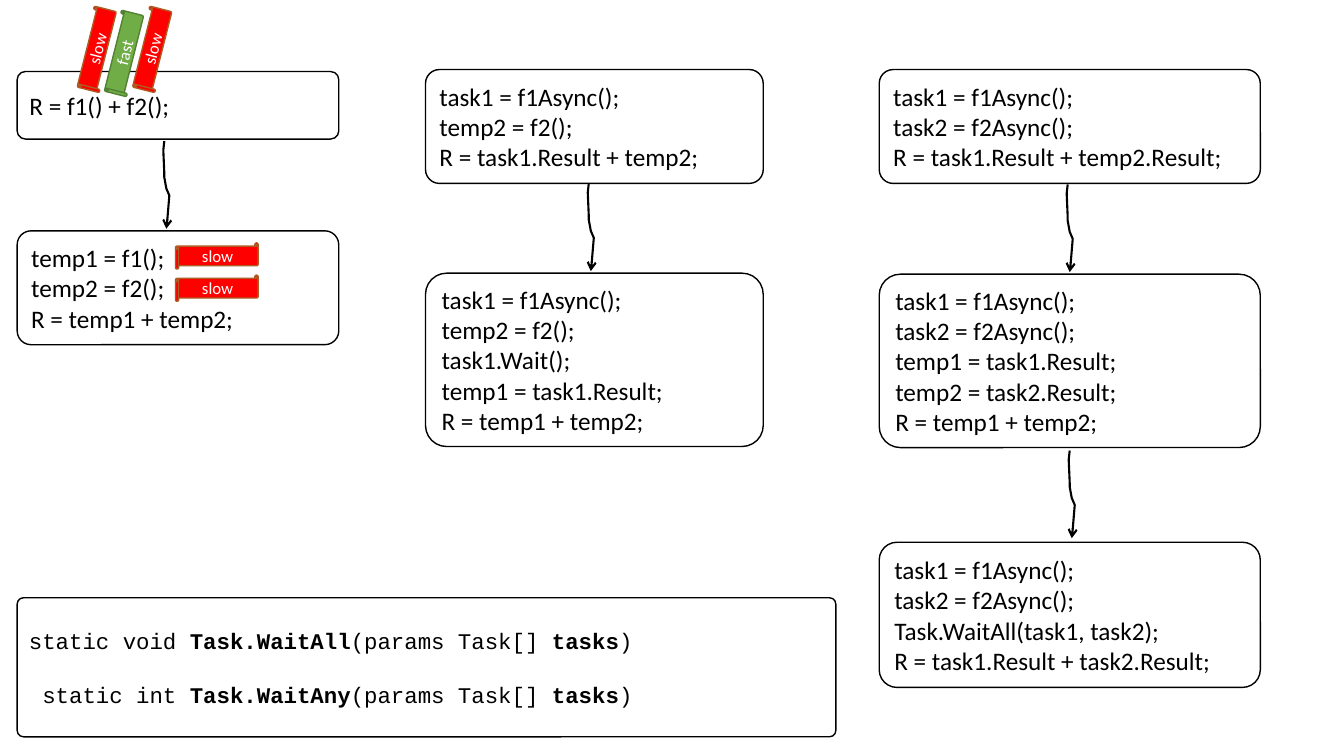
import dataclasses
import typing

import lxml.etree
import pptx
import pptx.dml.color
import pptx.enum.shapes
import pptx.enum.text
import pptx.oxml.ns
import pptx.util

Inches = pptx.util.Inches
Pt = pptx.util.Pt
SHAPES = pptx.enum.shapes.MSO_SHAPE
ALIGN = pptx.enum.text.PP_ALIGN
MIDDLE = pptx.enum.text.MSO_ANCHOR.MIDDLE

COLORS = {
    "ink": "000000",
    "paper": "FFFFFF",
    "slow": "FF0000",
    "slow edge": "AF5C24",
    "fast": "70AD47",
    "fast edge": "538035",
}
CODE = {"name": "Calibri", "size": Pt(18)}
MONO = {"name": "Courier New", "size": Pt(16)}
LABEL = {"name": "Calibri", "size": Pt(12)}

Run = tuple[str, bool]
Line = list[Run]


@dataclasses.dataclass
class Box:
    left: float
    top: float
    width: float
    height: float
    lines: list[Line]
    font: dict[str, typing.Any]
    round: float = 0.122
    gap: float = 0


@dataclasses.dataclass
class Scroll:
    left: float
    top: float
    label: str
    turn: float = 0


def plain(text: str) -> list[Line]:
    return [[(line, False)] for line in text.split("\n")]


def wait_line(start: str, name: str) -> Line:
    return [(start, False), (name, True), ("(params Task[] ", False),
            ("tasks", True), (")", False)]


# Code boxes, column by column
BOXES = [
    Box(0.17, 0.71, 3.19, 0.67, plain("R = f1() + f2();"), CODE),
    Box(0.17, 2.29, 3.19, 1.13,
        plain("temp1 = f1();\ntemp2 = f2();\nR = temp1 + temp2;"), CODE),
    Box(4.22, 0.69, 3.35, 1.13,
        plain("task1 = f1Async();\ntemp2 = f2();\nR = task1.Result + temp2;"), CODE),
    Box(4.22, 2.71, 3.35, 1.72,
        plain("task1 = f1Async();\ntemp2 = f2();\ntask1.Wait();\n"
              "temp1 = task1.Result;\nR = temp1 + temp2;"), CODE),
    Box(8.72, 0.69, 3.78, 1.13,
        plain("task1 = f1Async();\ntask2 = f2Async();\n"
              "R = task1.Result + temp2.Result;"), CODE),
    Box(8.72, 2.72, 3.78, 1.72,
        plain("task1 = f1Async();\ntask2 = f2Async();\ntemp1 = task1.Result;\n"
              "temp2 = task2.Result;\nR = temp1 + temp2;"), CODE),
    Box(8.72, 5.38, 3.78, 1.44,
        plain("task1 = f1Async();\ntask2 = f2Async();\n"
              "Task.WaitAll(task1, task2);\nR = task1.Result + task2.Result;"), CODE),
    Box(0.17, 5.93, 8.12, 1.38,
        [wait_line("static void ", "Task.WaitAll"),
         wait_line(" static int ", "Task.WaitAny")], MONO, 0.046, 19.5),
]

# Bent arrows: left and top of each, and the shared outline
ARROWS = [(1.62, 1.4), (5.83, 1.82), (10.58, 1.83), (10.6, 4.47)]
BEND = [(0.01, 0), (0, 0.09), (0.01, 0.32), (0.01, 0.36), (0.03, 0.47),
        (0.06, 0.54), (0.04, 0.78), (0.03, 0.87)]

TILT = 284.2
SCROLLS = [
    Scroll(0.55, 0.36, "slow", TILT),
    Scroll(1.1, 0.36, "slow", TILT),
    Scroll(0.82, 0.4, "fast", TILT),
    Scroll(1.74, 2.41, "slow"),
    Scroll(1.74, 2.73, "slow"),
]


def shade(name: str) -> pptx.dml.color.RGBColor:
    return pptx.dml.color.RGBColor.from_string(COLORS[name])


def paint(shape: typing.Any, fill: str | None, edge: str, width: float) -> None:
    shape.shadow.inherit = False
    if fill:
        shape.fill.solid()
        shape.fill.fore_color.rgb = shade(fill)
    else:
        shape.fill.background()
    shape.line.color.rgb = shade(edge)
    shape.line.width = Pt(width)


def write(shape: typing.Any, lines: list[Line], font: dict[str, typing.Any],
          color: str, align: typing.Any, gap: float = 0) -> None:
    frame = shape.text_frame
    frame.word_wrap = True
    frame.vertical_anchor = MIDDLE
    for rank, line in enumerate(lines):
        para = frame.add_paragraph() if rank else frame.paragraphs[0]
        para.alignment = align
        if rank and gap:
            para.space_before = Pt(gap)
        for text, bold in line:
            run = para.add_run()
            run.text = text
            for key, value in {**font, "bold": bold}.items():
                setattr(run.font, key, value)
            run.font.color.rgb = shade(color)


def draw_box(slide: typing.Any, box: Box) -> None:
    shape = slide.shapes.add_shape(
        SHAPES.ROUNDED_RECTANGLE, Inches(box.left), Inches(box.top),
        Inches(box.width), Inches(box.height))
    shape.adjustments[0] = box.round
    paint(shape, "paper", "ink", 1)
    write(shape, box.lines, box.font, "ink", ALIGN.LEFT, box.gap)


def draw_arrow(slide: typing.Any, left: float, top: float) -> None:
    first, *rest = [(Inches(left + x), Inches(top + y)) for x, y in BEND]
    pen = slide.shapes.build_freeform(*first)
    pen.add_line_segments(rest, close=False)
    shape = pen.convert_to_shape()
    paint(shape, None, "ink", 1.5)
    name = pptx.oxml.ns.qn
    edge = shape.element.spPr.find(name("a:ln"))
    lxml.etree.SubElement(edge, name("a:tailEnd"), type="arrow")


def draw_scroll(slide: typing.Any, scroll: Scroll) -> None:
    shape = slide.shapes.add_shape(
        SHAPES.HORIZONTAL_SCROLL, Inches(scroll.left), Inches(scroll.top),
        Inches(0.82), Inches(0.26))
    shape.rotation = scroll.turn
    paint(shape, scroll.label, f"{scroll.label} edge", 1)
    write(shape, plain(scroll.label), LABEL, "paper", ALIGN.CENTER)


def main() -> None:
    deck = pptx.Presentation()
    deck.slide_width, deck.slide_height = Inches(13.33), Inches(7.5)
    slide = deck.slides.add_slide(deck.slide_layouts[6])
    for box in BOXES:
        draw_box(slide, box)
    for left, top in ARROWS:
        draw_arrow(slide, left, top)
    for scroll in SCROLLS:
        draw_scroll(slide, scroll)
    deck.save("out.pptx")


if __name__ == "__main__":
    main()
